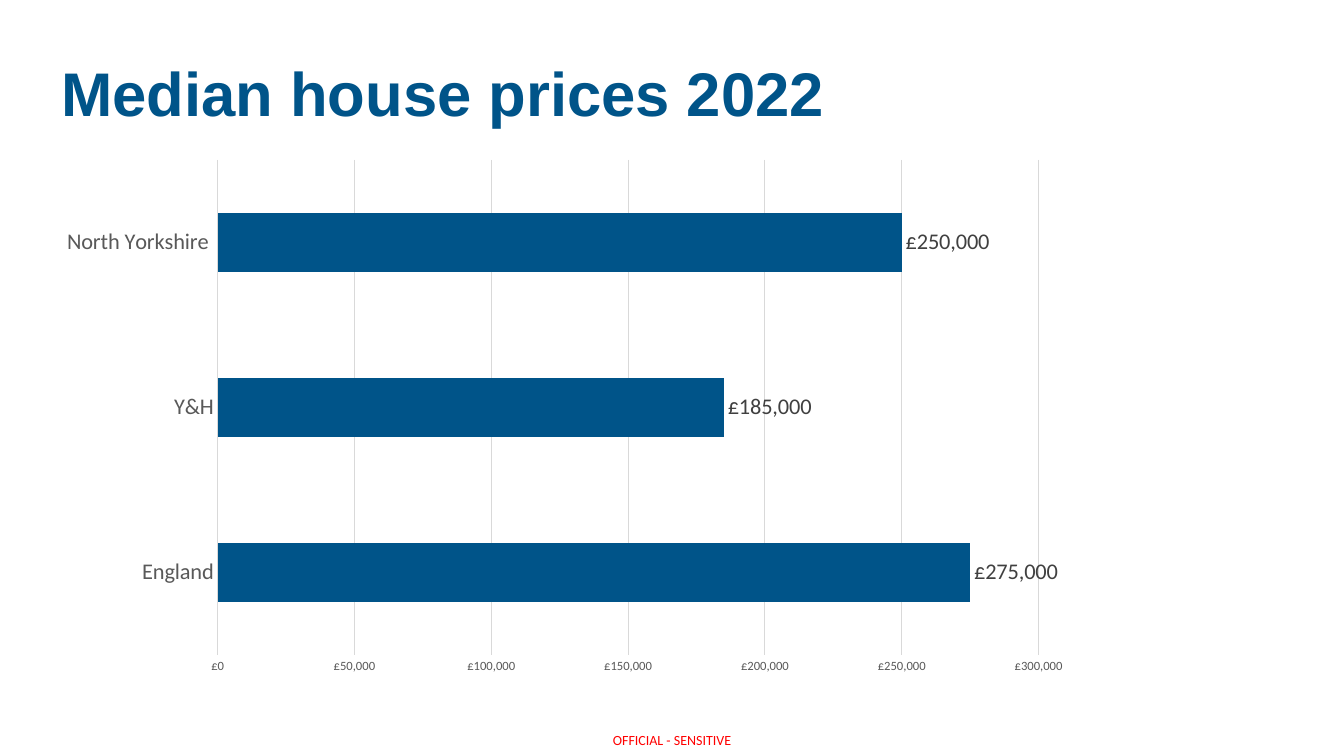
from lxml import etree
from pptx import Presentation
from pptx.chart.data import CategoryChartData
from pptx.dml.color import RGBColor
from pptx.enum.chart import XL_CHART_TYPE as Chart, XL_LABEL_POSITION as LabelPos, XL_TICK_MARK as Tick
from pptx.enum.text import MSO_ANCHOR as Anchor
from pptx.oxml.ns import qn
from pptx.util import Pt

HEADING = "Median house prices 2022"
MARKING = "OFFICIAL - SENSITIVE"
PRICES = {"England": 275000, "Y&H": 185000, "North Yorkshire ": 250000}
POUNDS = '"£"#,##0'
BLUE, RED, GREY, DARK, RULE = "005489", "FF0000", "595959", "404040", "D9D9D9"

HEADING_BOX = (36.7, 31.7, 828, 74.9)
PRICES_BOX = (36.7, 106.6, 742.3, 380.2)
MARKING_BOX = (437.8, 522.7, 87.1, 12.2)
PLOT_AREA = {"x": 0.16, "y": 0.02, "w": 0.79, "h": 0.93}


def points(box):
    return [Pt(length) for length in box]


def color(hex_code):
    return RGBColor.from_string(hex_code)


def set_font(font, size, hex_code, face="Calibri", bold=False):
    font.size, font.name, font.bold = Pt(size), face, bold
    font.color.rgb = color(hex_code)


def set_rule(line):
    line.color.rgb = color(RULE)
    line.width = Pt(0.75)


def add_text(slide, text, box, inset=(0, 0), wrap=False, spacing=1, **font):
    frame = slide.shapes.add_textbox(*points(box)).text_frame
    frame.margin_left = frame.margin_right = Pt(inset[0])
    frame.margin_top = frame.margin_bottom = Pt(inset[1])
    frame.word_wrap = wrap
    frame.vertical_anchor = Anchor.MIDDLE
    paragraph = frame.paragraphs[0]
    paragraph.text = text
    paragraph.line_spacing = spacing
    set_font(paragraph.font, **font)


def place_plot(chart):
    plot_area = chart.plots[0]._element.getparent()
    layout = plot_area.find(qn("c:layout"))
    if layout is None:
        layout = etree.Element(qn("c:layout"))
        plot_area.insert(0, layout)
    manual = etree.SubElement(layout, qn("c:manualLayout"))
    settings = {"layoutTarget": "inner", "xMode": "edge", "yMode": "edge", **PLOT_AREA}
    for tag, value in settings.items():
        etree.SubElement(manual, qn(f"c:{tag}")).set("val", str(value))


def add_prices(slide):
    data = CategoryChartData(number_format=POUNDS)
    data.categories = list(PRICES)
    data.add_series("Series 1", list(PRICES.values()))
    chart = slide.shapes.add_chart(Chart.BAR_CLUSTERED, *points(PRICES_BOX), data).chart
    chart.has_legend = chart.has_title = False
    set_font(chart.font, 10, "000000")
    place_plot(chart)

    regions, amounts = chart.category_axis, chart.value_axis
    for axis, size in ((regions, 16), (amounts, 9)):
        axis.major_tick_mark = axis.minor_tick_mark = Tick.NONE
        set_font(axis.tick_labels.font, size, GREY)
    set_rule(regions.format.line)
    amounts.format.line.fill.background()
    amounts.has_major_gridlines = True
    set_rule(amounts.major_gridlines.format.line)
    amounts.minimum_scale, amounts.maximum_scale, amounts.major_unit = 0, 300000, 50000
    amounts.tick_labels.number_format = POUNDS
    amounts.tick_labels.number_format_is_linked = False

    bars = chart.plots[0]
    bars.gap_width = 182
    bars.vary_by_categories = False
    fill = bars.series[0].format.fill
    fill.solid()
    fill.fore_color.rgb = color(BLUE)
    labels = bars.series[0].data_labels
    labels.show_value = True
    labels.position = LabelPos.OUTSIDE_END
    labels.number_format = POUNDS
    labels.number_format_is_linked = False
    set_font(labels.font, 16, DARK)


def main():
    deck = Presentation()
    deck.slide_width, deck.slide_height = points((960, 540))
    slide = deck.slides.add_slide(deck.slide_layouts[6])
    add_text(slide, MARKING, MARKING_BOX, size=10, hex_code=RED)
    add_text(slide, HEADING, HEADING_BOX, inset=(7.2, 3.6), wrap=True, spacing=0.9,
             size=44, hex_code=BLUE, face="Arial", bold=True)
    add_prices(slide)
    deck.save("out.pptx")


if __name__ == "__main__":
    main()
